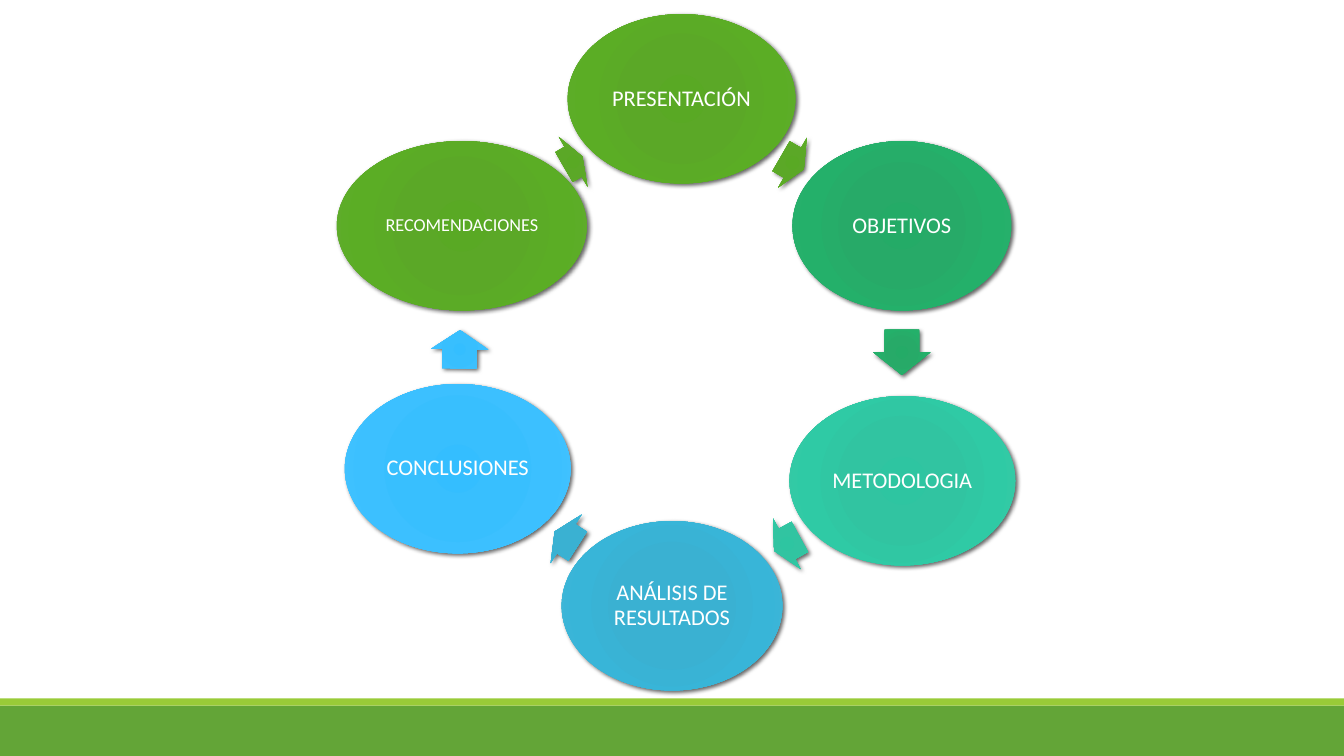
from dataclasses import dataclass

from lxml import etree
from pptx import Presentation
from pptx.dml.color import RGBColor
from pptx.enum.shapes import MSO_SHAPE
from pptx.enum.text import MSO_ANCHOR, PP_ALIGN
from pptx.oxml import parse_xml
from pptx.oxml.ns import qn
from pptx.util import Inches, Pt

RECT, OVAL, ARROW = MSO_SHAPE.RECTANGLE, MSO_SHAPE.OVAL, MSO_SHAPE.RIGHT_ARROW
MIDDLE, CENTER = MSO_ANCHOR.MIDDLE, PP_ALIGN.CENTER
NS = "http://schemas.openxmlformats.org/drawingml/2006/main"
STOPS = (0, 34, 70, 100)
GREEN = ("59A924", "5BA827", "5BAD25", "62AB31")
EMERALD = ("24AB67", "27AA68", "24B06A", "31AD6F")
TEAL = ("2EC5A1", "31C4A1", "2FCAA5", "3EC7A6")
CYAN = ("37B1D3", "3AB1D2", "38B5D8", "48B7D5")
SKY = ("34BEFF", "38BFFE", "3CC0FF", "4BC5FF")
OVAL_HEIGHT, ARROW_HEIGHT = 1.68, 0.57


@dataclass
class Step:
    """One oval of the cycle and the arrow leading to the next one."""
    text: str
    colors: tuple[str, ...]
    left: float
    top: float
    width: float
    arrow_left: float
    arrow_top: float
    arrow_width: float
    arrow_rotation: float
    size: int = 16


STEPS = [
    Step("PRESENTACIÓN", GREEN, 5.63, 0.14, 2.26, 7.73, 1.33, 0.26, 30),
    Step("OBJETIVOS", EMERALD, 7.86, 1.4, 2.17, 8.72, 3.21, 0.45, 90),
    Step("METODOLOGIA", TEAL, 7.83, 3.93, 2.24, 7.66, 5.11, 0.29, 151.4),
    Step("ANÁLISIS DE RESULTADOS", CYAN, 5.57, 5.17, 2.19, 5.48, 5.06, 0.27, 212.6),
    Step("CONCLUSIONES", SKY, 3.42, 3.81, 2.24, 4.37, 3.18, 0.38, 270.9),
    Step("RECOMENDACIONES", GREEN, 3.34, 1.4, 2.48, 5.58, 1.32, 0.21, 330, 13),
]


def rgb(color: str) -> RGBColor:
    return RGBColor.from_string(color)


def add_plain(s, kind, left: float, top: float, width: float, height: float):
    """Add a preset shape without line or shadow."""
    sp = s.shapes.add_shape(kind, Inches(left), Inches(top), Inches(width), Inches(height))
    sp.line.fill.background()
    sp.shadow.inherit = False
    return sp


def add_bar(s, top: float, height: float, color: str) -> None:
    sp = add_plain(s, RECT, 0, top, 13.33, height)
    sp.fill.solid()
    sp.fill.fore_color.rgb = rgb(color)


def style_shaded(sp, colors: tuple[str, ...]) -> None:
    """Give a shape a radial gradient and a soft drop shadow."""
    stops = "".join(f'<a:gs pos="{pos * 1000}"><a:srgbClr val="{color}"/></a:gs>'
                    for pos, color in zip(STOPS, colors))
    gradient = parse_xml(
        f'<a:gradFill xmlns:a="{NS}" rotWithShape="1"><a:gsLst>{stops}</a:gsLst>'
        '<a:path path="circle"><a:fillToRect l="100000" t="100000" r="100000" b="100000"/>'
        '</a:path></a:gradFill>')
    props = sp._element.spPr
    props.find(qn("a:prstGeom")).addnext(gradient)
    shadow = etree.SubElement(props.find(qn("a:effectLst")), qn("a:outerShdw"),
                              blurRad=str(Pt(3)), dist=str(Pt(2)), dir="2700000",
                              algn="br", rotWithShape="0")
    black = etree.SubElement(shadow, qn("a:srgbClr"), val="000000")
    etree.SubElement(black, qn("a:alpha"), val="60000")


def add_step(s, step: Step) -> None:
    sp = add_plain(s, OVAL, step.left, step.top, step.width, OVAL_HEIGHT)
    style_shaded(sp, step.colors)
    tf = sp.text_frame
    tf.word_wrap = True
    tf.vertical_anchor = MIDDLE
    tf.margin_left = tf.margin_right = tf.margin_top = tf.margin_bottom = Inches(0.02)
    p = tf.paragraphs[0]
    p.text = step.text
    p.alignment = CENTER
    p.line_spacing = 0.9
    p.space_after = Pt(0.35 * step.size)
    p.font.name = "Calibri"
    p.font.size = Pt(step.size)
    p.font.color.rgb = rgb("FFFFFF")

    arrow = add_plain(s, ARROW, step.arrow_left, step.arrow_top, step.arrow_width, ARROW_HEIGHT)
    arrow.adjustments[0], arrow.adjustments[1] = 0.6, 0.5
    arrow.rotation = step.arrow_rotation
    style_shaded(arrow, step.colors)


def main() -> None:
    prs = Presentation()
    prs.slide_width, prs.slide_height = Inches(13.33), Inches(7.5)
    s = prs.slides.add_slide(prs.slide_layouts[6])
    add_bar(s, 7, 0.5, "63A537")
    add_bar(s, 6.93, 0.07, "99CB38")
    for step in STEPS:
        add_step(s, step)
    prs.save("out.pptx")


if __name__ == "__main__":
    main()
